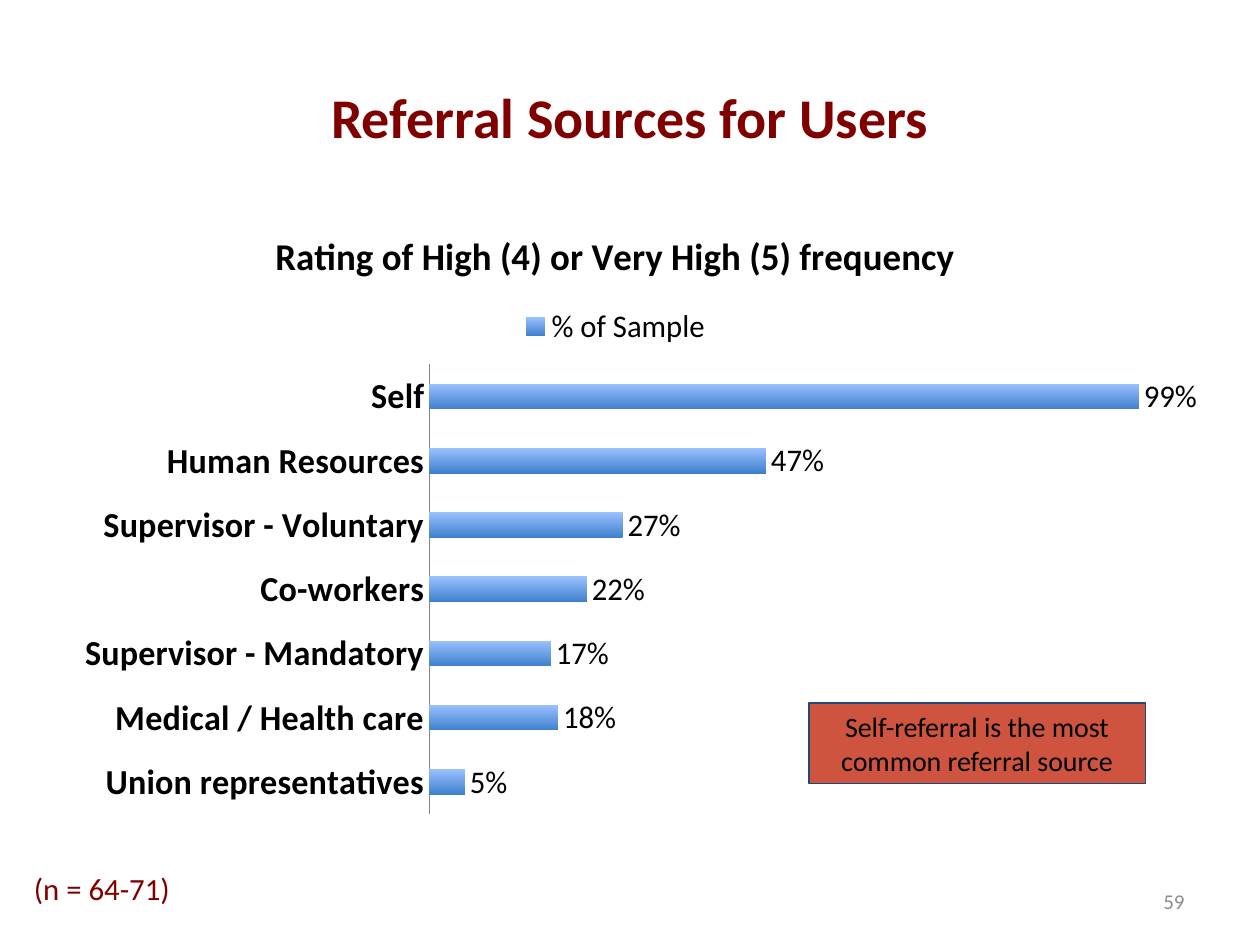
from pptx import Presentation
from pptx.chart.data import CategoryChartData
from pptx.dml.color import RGBColor
from pptx.enum import chart as c, shapes, text
from pptx.util import Inches, Pt

FONT = "Calibri"
MAROON, BLACK, GRAY = "800000", "000000", "8C8C8C"
CHART_TITLE = "Rating of High (4) or Very High (5) frequency"
SERIES_NAME = "% of Sample"
REFERRALS = [
    ("Union representatives", 0.05),
    ("Medical / Health care", 0.18),
    ("Supervisor - Mandatory", 0.17),
    ("Co-workers", 0.22),
    ("Supervisor - Voluntary", 0.27),
    ("Human Resources", 0.47),
    ("Self", 0.99),
]
LEFT, CENTER, RIGHT = text.PP_ALIGN.LEFT, text.PP_ALIGN.CENTER, text.PP_ALIGN.RIGHT
# wording, (left, top, width, height), size, colour, bold, alignment
TEXTS = [
    ("Referral Sources for Users", (0.5, 0.3, 9, 1.25), 32, MAROON, True, CENTER),
    ("59", (7.17, 6.95, 2.33, 0.4), 12, GRAY, False, RIGHT),
    ("(n = 64-71)", (0.17, 6.75, 2.67, 0.6), 17.6, MAROON, False, LEFT),
]
CALLOUT = ("Self-referral is the most common referral source",
           (6.42, 5.58, 2.67, 0.64), 16, BLACK, False, CENTER)


def color(value):
    return RGBColor.from_string(value)


def style(font, size, value=BLACK, bold=False):
    font.name, font.size, font.bold = FONT, Pt(size), bold
    font.color.rgb = color(value)


def write(shape, wording, size, value, bold, alignment):
    frame = shape.text_frame
    frame.word_wrap = True
    frame.vertical_anchor = text.MSO_ANCHOR.MIDDLE
    frame.text = wording
    paragraph = frame.paragraphs[0]
    paragraph.alignment = alignment
    style(paragraph.runs[0].font, size, value, bold)


def add_referral_chart(slide, box):
    data = CategoryChartData(number_format="0%")
    data.categories = [name for name, _ in REFERRALS]
    data.add_series(SERIES_NAME, [share for _, share in REFERRALS])
    chart = slide.shapes.add_chart(
        c.XL_CHART_TYPE.BAR_CLUSTERED, *map(Inches, box), data).chart
    style(chart.font, 18)

    chart.has_title = True
    chart.chart_title.text_frame.text = CHART_TITLE
    style(chart.chart_title.text_frame.paragraphs[0].runs[0].font, 21.6, bold=True)
    chart.has_legend = True
    chart.legend.position = c.XL_LEGEND_POSITION.TOP
    chart.legend.include_in_layout = False
    style(chart.legend.font, 18)

    categories, values = chart.category_axis, chart.value_axis
    categories.major_tick_mark = c.XL_TICK_MARK.NONE
    categories.format.line.color.rgb = color("868686")
    categories.format.line.width = Pt(0.75)
    style(categories.tick_labels.font, 20, bold=True)
    values.minimum_scale, values.maximum_scale = 0, 1
    values.has_major_gridlines = False
    values.visible = False

    plot = chart.plots[0]
    plot.gap_width, plot.overlap = 150, -25
    plot.vary_by_categories = False
    fill = plot.series[0].format.fill
    fill.gradient()
    fill.gradient_angle = 90
    for stop, value in zip(fill.gradient_stops, ("3F80CD", "9BC1FF")):
        stop.color.rgb = color(value)

    plot.has_data_labels = True
    labels = plot.data_labels
    labels.show_value = True
    labels.number_format, labels.number_format_is_linked = "0%", False
    labels.position = c.XL_LABEL_POSITION.OUTSIDE_END
    style(labels.font, 18)


def add_callout(slide, wording, box, *look):
    callout = slide.shapes.add_shape(
        shapes.MSO_SHAPE.RECTANGLE, *map(Inches, box))
    callout.shadow.inherit = False
    callout.fill.solid()
    callout.fill.fore_color.rgb = color("CF543F")
    callout.line.color.rgb = color("1F497D")
    callout.line.width = Pt(0.75)
    write(callout, wording, *look)


def main():
    presentation = Presentation()
    presentation.slide_width, presentation.slide_height = Inches(10), Inches(7.5)
    slide = presentation.slides.add_slide(presentation.slide_layouts[6])
    add_referral_chart(slide, (0.5, 1.61, 9, 4.95))
    add_callout(slide, *CALLOUT)
    for wording, box, *look in TEXTS:
        write(slide.shapes.add_textbox(*map(Inches, box)), wording, *look)
    presentation.save("out.pptx")


if __name__ == "__main__":
    main()
